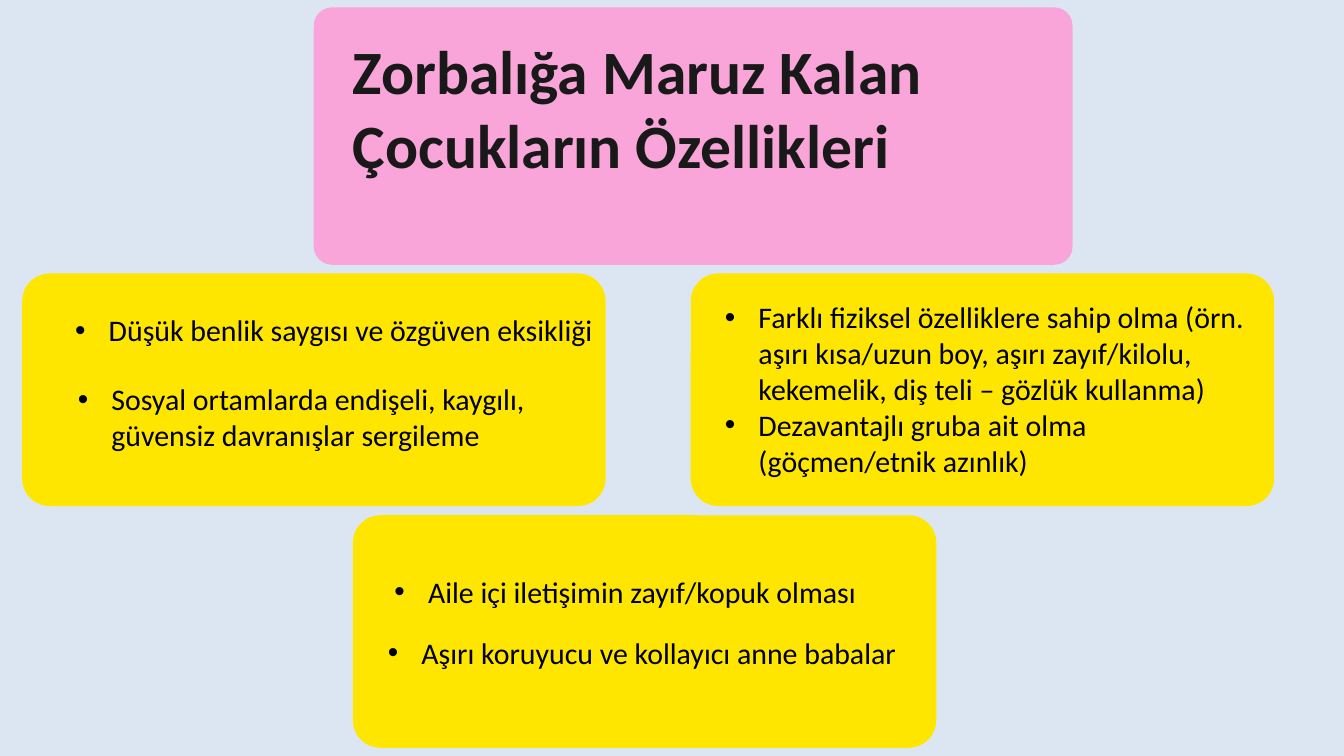
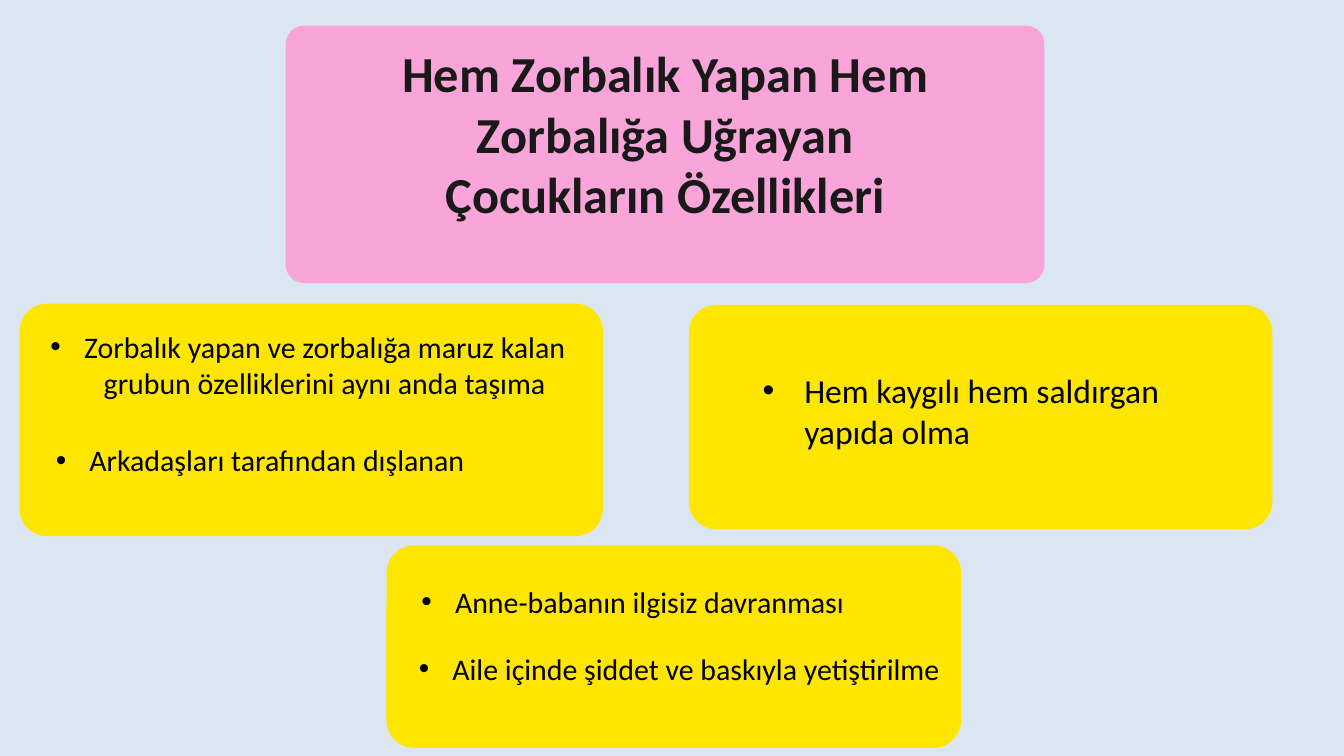
from lxml import etree
from pptx import Presentation
from pptx import util as u
from pptx.dml.color import RGBColor
from pptx.enum import shapes, text
from pptx.oxml.ns import qn

Cm = u.Cm
HUES = {"back": "DCE6F2", "title": "FAA5D9", "card": "FEE600", "head": "191919", "body": "000000"}
HEAD = {"name": "Calibri", "bold": True}
BODY = {"name": "Calibri", "size": u.Pt(32)}
LEFT, MID = text.PP_ALIGN.LEFT, text.PP_ALIGN.CENTER
CARD_W, CARD_H = 22.05, 8.79
HEAD_W, HEAD_H = 28.68, 9.73
LINE_H = 1.63


def apply(item, look):
    for key, value in look.items():
        setattr(item, key, value)


def paint(fill, hue):
    fill.solid()
    fill.fore_color.rgb = RGBColor.from_string(HUES[hue])


def panel(slide, box, hue, round_by):
    shape = slide.shapes.add_shape(shapes.MSO_SHAPE.ROUNDED_RECTANGLE, *map(Cm, box))
    shape.adjustments[0] = round_by / min(box[2:])
    shape.shadow.inherit = False
    shape.line.fill.background()
    paint(shape.fill, hue)


def write(slide, box, lines, font, hue, para, wrap=True, inset=None):
    frame = slide.shapes.add_textbox(*map(Cm, box)).text_frame
    apply(frame, {"word_wrap": wrap, "auto_size": text.MSO_AUTO_SIZE.SHAPE_TO_FIT_TEXT})
    if inset is not None:
        sides = ("left", "top", "right", "bottom")
        apply(frame, {f"margin_{side}": Cm(inset) for side in sides})
    for i, line in enumerate(lines):
        p = frame.add_paragraph() if i else frame.paragraphs[0]
        apply(p, para)
        run = p.add_run()
        run.text = line
        apply(run.font, font)
        run.font.color.rgb = RGBColor.from_string(HUES[hue])
    return frame


def bullet(p, indent):
    props = p._p.get_or_add_pPr()
    props.set("marL", str(Cm(indent)))
    props.set("indent", str(-Cm(indent)))
    etree.SubElement(props, qn("a:buFont")).set("typeface", "Arial")
    etree.SubElement(props, qn("a:buChar")).set("char", "•")


def title(slide, x, y, words, inner, size, para, inset=None):
    panel(slide, (x, y, HEAD_W, HEAD_H), "title", 0.69)
    dx, dy, w, h = inner
    write(slide, (x + dx, y + dy, w, h), [words], {**HEAD, "size": u.Pt(size)},
          "head", para, inset=inset)


def note(dx, dy, w, *lines, h=LINE_H, wrap=False, size=32, indent=1.27, align=LEFT):
    def place(slide, x, y):
        frame = write(slide, (x + dx, y + dy, w, h), lines, {**BODY, "size": u.Pt(size)},
                      "body", {"alignment": align}, wrap)
        for p in frame.paragraphs:
            bullet(p, indent)
    return place


def card(slide, x, y, *notes, w=CARD_W, h=CARD_H):
    panel(slide, (x, y, w, h), "card", 1.04)
    for place in notes:
        place(slide, x, y)


def page(deck):
    slide = deck.slides.add_slide(deck.slide_layouts[6])
    paint(slide.background.fill, "back")
    return slide


def victims(deck):
    slide = page(deck)
    row = 10.34
    title(slide, 11.86, 0.28, "Zorbalığa Maruz Kalan Çocukların Özellikleri",
          (1.47, 0.94, 26.24, 8.43), 66, {"line_spacing": u.Pt(79.4)}, inset=0)
    card(slide, 0.84, row,
         note(1.75, 1.32, 20.27, "Düşük benlik saygısı ve özgüven eksikliği"),
         note(1.85, 3.94, 17.86,
              "Sosyal ortamlarda endişeli, kaygılı, güvensiz davranışlar sergileme",
              h=3, wrap=True))
    card(slide, 26.11, row,
         note(1.04, 0.84, 20.98,
              "Farklı fiziksel özelliklere sahip olma (örn. aşırı kısa/uzun boy, "
              "aşırı zayıf/kilolu, kekemelik, diş teli – gözlük kullanma)",
              "Dezavantajlı gruba ait olma (göçmen/etnik azınlık)", h=7.09, wrap=True))
    card(slide, 13.34, 19.48,
         note(1.32, 2.08, 18.16, "Aile içi iletişimin zayıf/kopuk olması"),
         note(1.07, 4.39, 19.94, "Aşırı koruyucu ve kollayıcı anne babalar"))


def both(deck):
    slide = page(deck)
    title(slide, 10.8, 0.97, "Hem Zorbalık Yapan Hem Zorbalığa Uğrayan Çocukların Özellikleri",
          (3.15, 0.51, 22.4, 10.85), 54, {"alignment": MID})
    card(slide, 0.74, 11.48,
         note(-0.13, 0.81, 22.07,
              "Zorbalık yapan ve zorbalığa maruz kalan grubun özelliklerini aynı anda taşıma",
              h=3, wrap=True, align=MID),
         note(1.12, 5.11, 16.13, "Arkadaşları tarafından dışlanan"))
    card(slide, 26.04, 11.53,
         note(2.54, 2.34, 17.35, "Hem kaygılı hem saldırgan yapıda olma",
              h=3.33, wrap=True, size=36, indent=1.57), h=8.48)
    card(slide, 14.61, 20.62,
         note(1.07, 1.32, 16.66, "Anne-babanın ilgisiz davranması"),
         note(0.97, 3.84, 20.42, "Aile içinde şiddet ve baskıyla yetiştirilme"),
         w=21.72, h=7.65)


def main():
    deck = Presentation()
    apply(deck, {"slide_width": Cm(50.8), "slide_height": Cm(28.58)})
    victims(deck)
    both(deck)
    deck.save("out.pptx")


if __name__ == "__main__":
    main()
